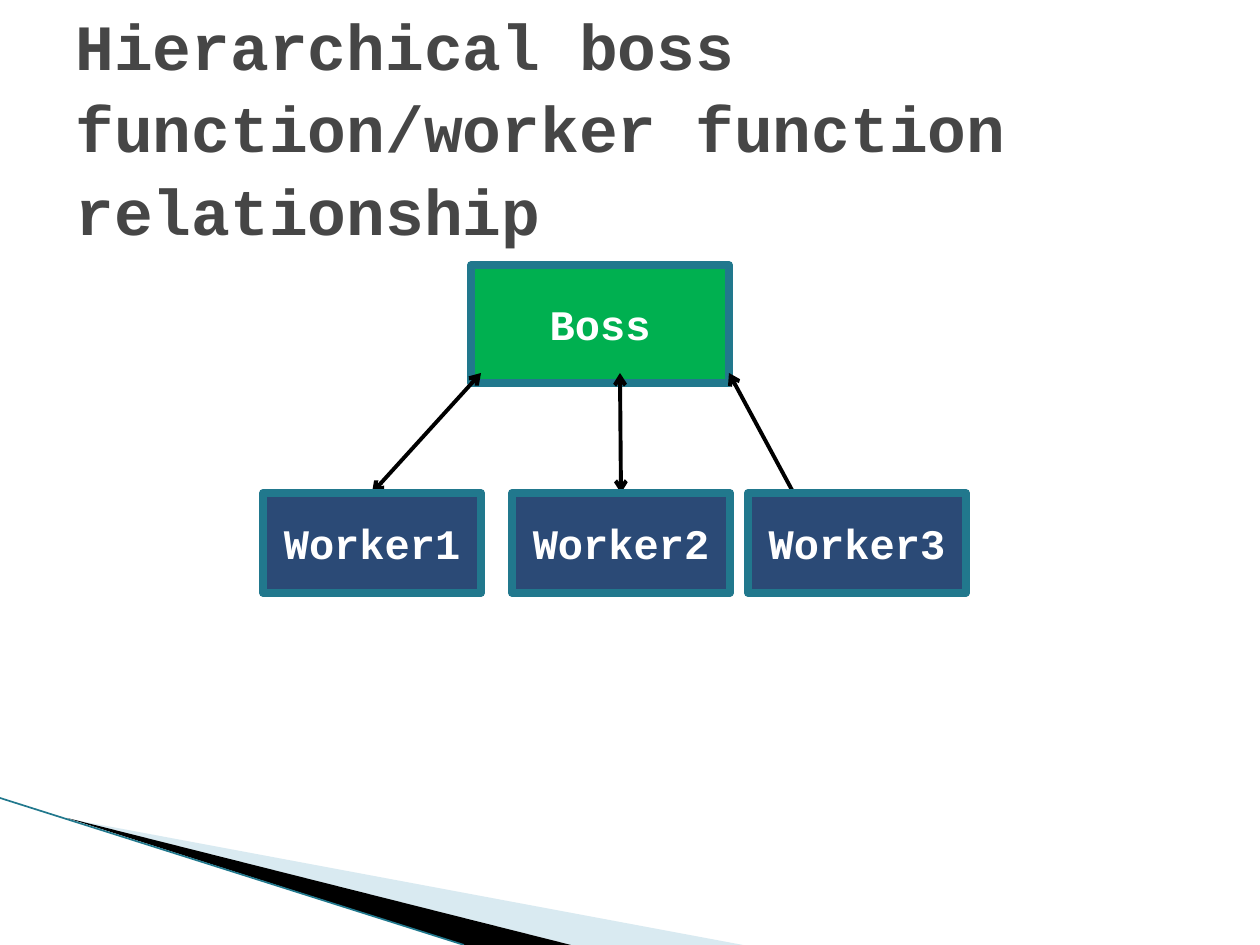
from lxml.etree import SubElement
from pptx import Presentation
from pptx.dml.color import RGBColor
from pptx.enum.shapes import MSO_CONNECTOR as Connector, MSO_SHAPE as Shape
from pptx.enum.text import MSO_ANCHOR as Anchor, PP_ALIGN as Align
from pptx.oxml.ns import qn
from pptx.util import Pt

PX = 914400 // 126
FONT = "Courier New"
TEAL = "21788D"
BLACK = "000000"

TITLE = "Hierarchical boss function/worker function relationship"
TITLE_AREA = (63, 38, 1134, 157)
BOSS = ("Boss", (471, 265, 258, 118))
WORKERS = [("Worker1", 263), ("Worker2", 512), ("Worker3", 748)]
WORKER_TOP, WORKER_WIDTH, WORKER_HEIGHT = 493, 218, 100

# Start, end and whether the end meets the top middle of its worker
ARROWS = [
    ((481, 373), (372, 493), True),
    ((620, 373), (620, 493), True),
    ((729, 373), (799, 503), False),
]

# Outline, colour, opacity in percent
WEDGES = [
    ([(69, 819), (743, 945), (571, 945)], "A0CBDC", 40),
    ([(67, 818), (571, 945), (464, 945)], BLACK, 100),
]
EDGE = ((0, 798), (464, 945))


def px(*lengths):
    return [length * PX for length in lengths]


def color(hex_string):
    return RGBColor.from_string(hex_string)


def write(shape, text, size, hex_color, align=Align.LEFT, spacing=None):
    frame = shape.text_frame
    frame.word_wrap = True
    frame.vertical_anchor = Anchor.MIDDLE
    para = frame.paragraphs[0]
    para.alignment = align
    if spacing:
        para.line_spacing = spacing
    span = para.add_run()
    span.text = text
    span.font.name = FONT
    span.font.size = Pt(size)
    span.font.bold = True
    span.font.color.rgb = color(hex_color)


def add_box(slide, text, area, fill):
    box = slide.shapes.add_shape(Shape.RECTANGLE, *px(*area))
    box.shadow.inherit = False
    box.fill.solid()
    box.fill.fore_color.rgb = color(fill)
    box.line.color.rgb = color(TEAL)
    box.line.width = Pt(4.33)
    write(box, text, 24, "FFFFFF", align=Align.CENTER)
    return box


def add_line(slide, start, end, hex_color, width, arrows=False):
    line = slide.shapes.add_connector(Connector.STRAIGHT, *px(*start, *end))
    line.line.color.rgb = color(hex_color)
    line.line.width = Pt(width)
    properties = line._element.spPr
    if arrows:
        outline = properties.find(qn("a:ln"))
        for tag in ("a:headEnd", "a:tailEnd"):
            SubElement(outline, qn(tag), type="arrow")
    SubElement(properties, qn("a:effectLst"))
    return line


def add_wedge(slide, points, fill, opacity):
    builder = slide.shapes.build_freeform(*points[0], scale=PX)
    builder.add_line_segments(points[1:], close=True)
    wedge = builder.convert_to_shape()
    wedge.shadow.inherit = False
    wedge.line.fill.background()
    wedge.fill.solid()
    wedge.fill.fore_color.rgb = color(fill)
    if opacity < 100:
        tint = wedge._element.spPr.find(qn("a:solidFill"))[0]
        SubElement(tint, qn("a:alpha"), val=str(opacity * 1000))


def main():
    deck = Presentation()
    deck.slide_width, deck.slide_height = px(1260, 945)
    slide = deck.slides.add_slide(deck.slide_layouts[6])

    for wedge in WEDGES:
        add_wedge(slide, *wedge)
    add_line(slide, *EDGE, TEAL, 0.95)

    title = slide.shapes.add_textbox(*px(*TITLE_AREA))
    title.text_frame.margin_top = 22 * PX
    write(title, TITLE, 36.9, "464646", spacing=1.07)

    add_box(slide, *BOSS, "00B050")
    # Arrows come before the workers so that the boxes cover their ends
    lines = [add_line(slide, start, end, BLACK, 2.25, arrows=True)
             for start, end, _ in ARROWS]
    for (name, left), line, (_, _, joined) in zip(WORKERS, lines, ARROWS):
        area = (left, WORKER_TOP, WORKER_WIDTH, WORKER_HEIGHT)
        worker = add_box(slide, name, area, "2B4A76")
        if joined:
            line.end_connect(worker, 0)

    deck.save("out.pptx")


if __name__ == "__main__":
    main()
